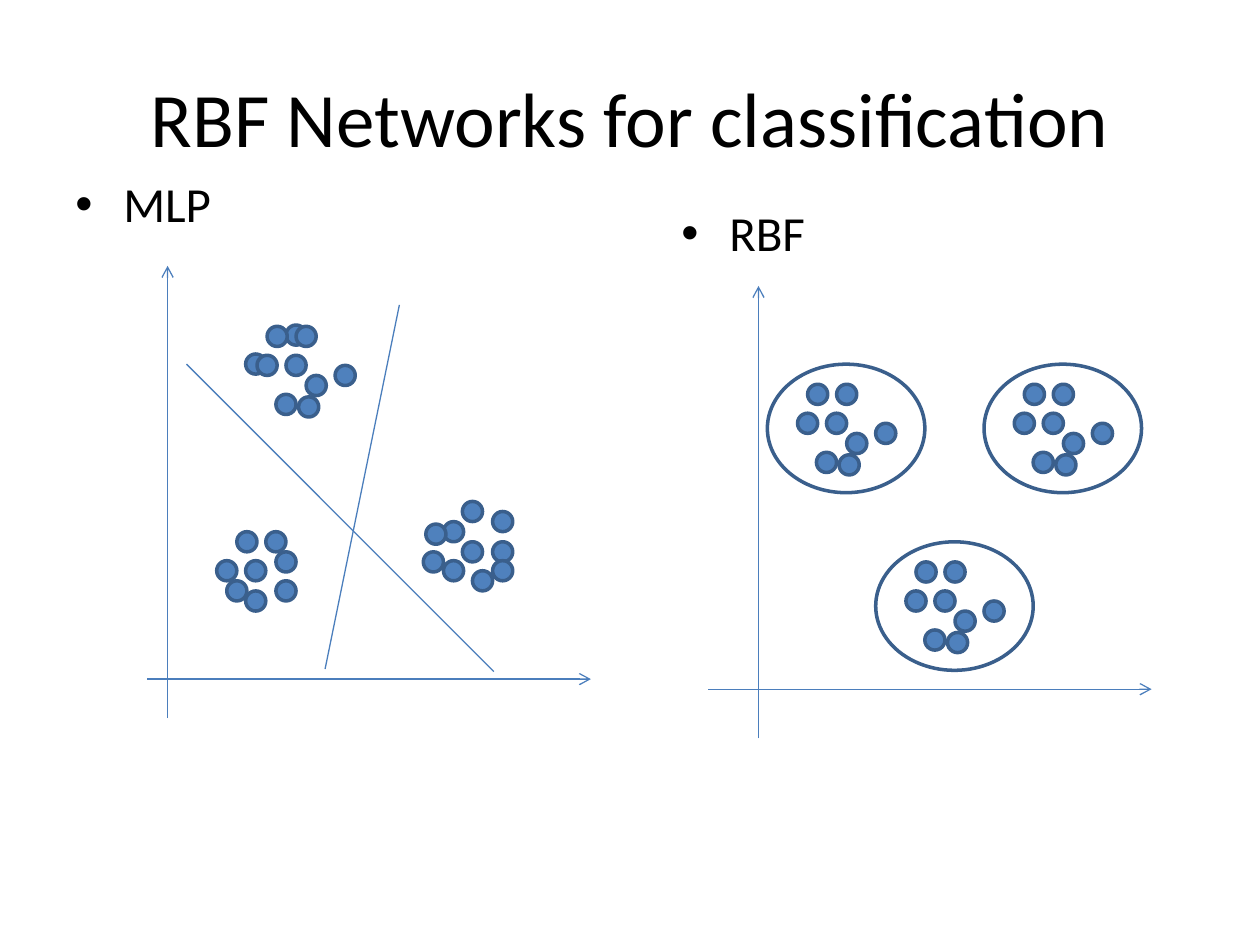
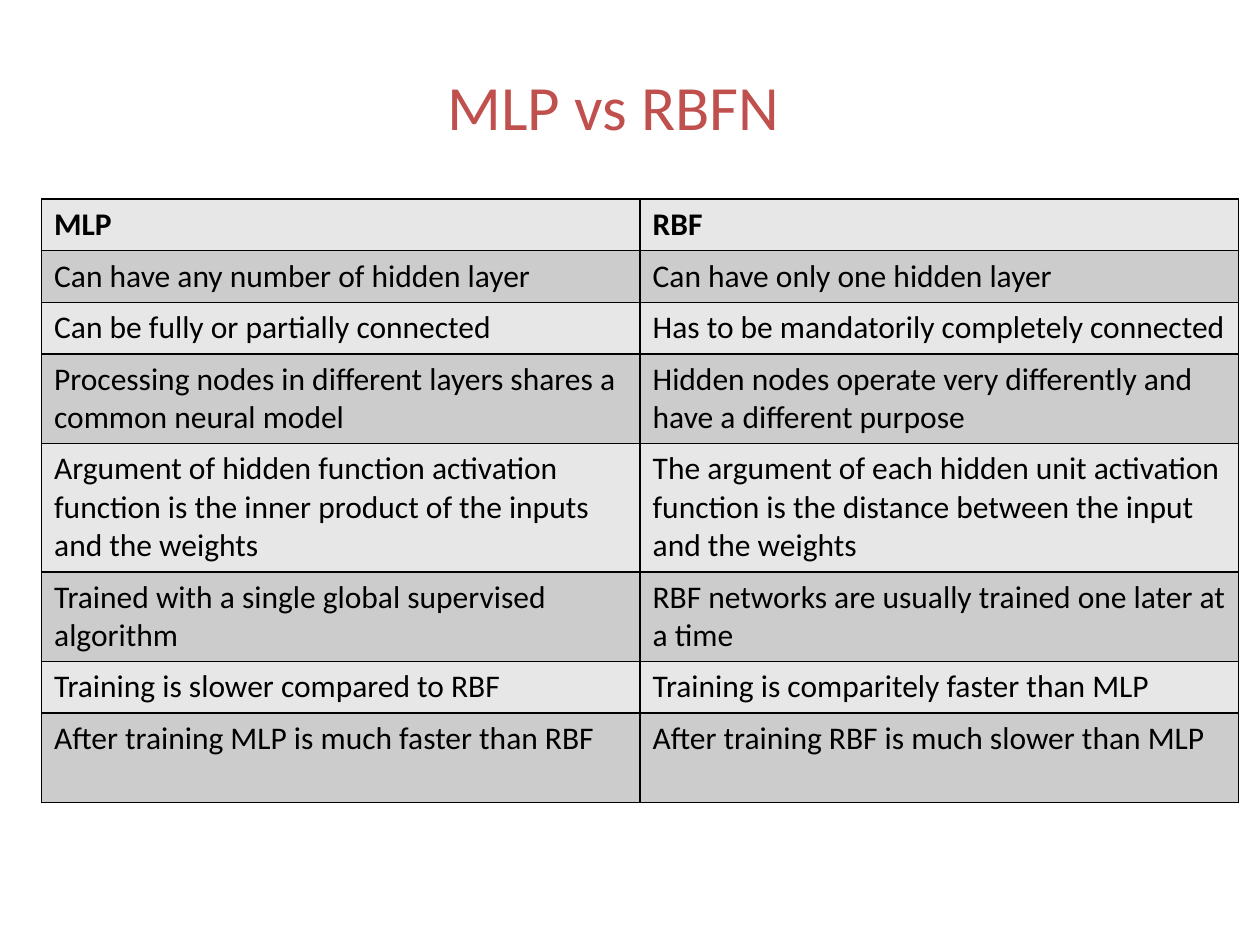
from pptx import Presentation
from pptx.dml.color import RGBColor
from pptx.enum.shapes import MSO_CONNECTOR, MSO_SHAPE
from pptx.enum.text import MSO_ANCHOR, PP_ALIGN
from pptx.oxml.ns import qn
from pptx.util import Inches, Pt
from lxml import etree

OVAL = MSO_SHAPE.OVAL
STRAIGHT = MSO_CONNECTOR.STRAIGHT
CENTER = PP_ALIGN.CENTER
MIDDLE = MSO_ANCHOR.MIDDLE

FONT = "Calibri"
BLACK, WHITE, RED = "000000", "FFFFFF", "C0504D"
BLUE, EDGE, LINE = "4F81BD", "3A5F8C", "4B7EBC"
BANDS = ("E7E7E7", "CCCCCC")
DOT = 0.16
PLOT = (3.52, 3.59)
RING = (1.25, 1.02)

CLUSTER = [(0.24, 0.39), (0.39, 0.7), (0.63, 0.55), (0.47, 0.39),
           (0.32, 0.16), (0.55, 0.16), (0.57, 0.72), (0.86, 0.47)]
TOP_DOTS = [(1.1, 0.47), (0.78, 0.7)]
LEFT_DOTS = [(0.78, 2.34), (0.71, 2.11), (1.02, 2.5), (0.55, 2.34),
             (0.78, 2.58), (1.02, 2.27), (0.94, 2.11), (0.63, 2.5)]
RIGHT_DOTS = [(2.5, 2.19), (2.74, 2.19), (2.5, 1.87), (2.58, 2.42),
              (2.74, 1.95), (2.35, 2.03), (2.35, 2.34), (2.74, 2.34),
              (2.19, 2.27), (2.21, 2.05)]
RINGS = [(1.33, 2.03), (2.19, 0.62), (0.47, 0.62)]

ROWS = [
    (0.41, "MLP", "RBF"),
    (0.41, "Can have any number of hidden layer",
     "Can have only one hidden layer"),
    (0.41, "Can be fully or partially connected",
     "Has to be mandatorily completely connected"),
    (0.71, "Processing nodes in different layers shares a common neural model",
     "Hidden nodes operate very differently and have a different purpose"),
    (1.02, "Argument of hidden function activation function is the inner "
     "product of the inputs and the weights",
     "The argument of each hidden unit activation function is the distance "
     "between the input and the weights"),
    (0.71, "Trained with a single global supervised algorithm",
     "RBF networks are usually trained one later at a time"),
    (0.41, "Training is slower compared to RBF",
     "Training is comparitely faster than MLP"),
    (0.71, "After training MLP is much faster than RBF",
     "After training RBF is much slower than MLP"),
]


def rgb(code):
    """Turn a hex string into a colour."""
    return RGBColor.from_string(code)


def style(para, size, color, bold=False):
    """Set the font of a paragraph."""
    font = para.font
    font.name, font.size, font.bold = FONT, Pt(size), bold
    font.color.rgb = rgb(color)


def place(shape, box):
    """Move a shape into a box given in inches."""
    shape.left, shape.top, shape.width, shape.height = map(Inches, box)


def add_slide(deck, text, box, size, color):
    """Add a title-only slide with its title formatted."""
    slide = deck.slides.add_slide(deck.slide_layouts[5])
    title = slide.shapes.title
    place(title, box)
    title.text_frame.text = text
    title.text_frame.vertical_anchor = MIDDLE
    para = title.text_frame.paragraphs[0]
    para.alignment = CENTER
    style(para, size, color)
    return slide


def bullet(slide, text, box):
    """Add a text box holding one bulleted heading."""
    frame = slide.shapes.add_textbox(*map(Inches, box)).text_frame
    frame.word_wrap = True
    para = frame.paragraphs[0]
    para.text = text
    para.space_before = Pt(5.6)
    style(para, 28, BLACK)
    props = para._p.get_or_add_pPr()
    props.set("marL", str(Inches(0.38)))
    props.set("indent", str(Inches(-0.38)))
    etree.SubElement(props, qn("a:buFont")).set("typeface", "Arial")
    etree.SubElement(props, qn("a:buChar")).set("char", "•")


def oval(shapes, box, fill):
    """Add an outlined oval."""
    shape = shapes.add_shape(OVAL, *map(Inches, box))
    shape.shadow.inherit = False
    shape.fill.solid()
    shape.fill.fore_color.rgb = rgb(fill)
    shape.line.color.rgb = rgb(EDGE)
    shape.line.width = Pt(2)


def dots(shapes, left, top, spots):
    """Add data points at offsets from a corner."""
    for x, y in spots:
        oval(shapes, (left + x, top + y, DOT, DOT), BLUE)


def cluster(slide, left, top):
    """Add a grouped cluster of eight points."""
    dots(slide.shapes.add_group_shape().shapes, left, top, CLUSTER)


def rule(slide, start, end, arrow=False):
    """Draw a thin line, with an arrowhead at its end if asked."""
    line = slide.shapes.add_connector(STRAIGHT, *map(Inches, start + end))
    line.line.color.rgb = rgb(LINE)
    line.line.width = Pt(0.75)
    if arrow:
        etree.SubElement(line.line._ln, qn("a:tailEnd")).set("type", "arrow")
    etree.SubElement(line._element.spPr, qn("a:effectLst"))


def axes(slide, left, top, x, y):
    """Draw two axes that cross at an offset in the plot box."""
    wide, high = PLOT
    rule(slide, (left + x, top + high), (left + x, top), True)
    rule(slide, (left, top + y), (left + wide, top + y), True)


def mlp_plot(slide, left, top):
    """Draw three clusters split by straight lines."""
    axes(slide, left, top, 0.16, 3.28)
    dots(slide.shapes, left, top, TOP_DOTS + LEFT_DOTS + RIGHT_DOTS)
    rule(slide, (left + 0.31, top + 0.78), (left + 2.75, top + 3.22))
    rule(slide, (left + 1.41, top + 3.2), (left + 2, top + 0.31))
    cluster(slide, left + 0.63, top + 0.32)


def rbf_plot(slide, left, top):
    """Draw three clusters, each inside a ring."""
    axes(slide, left, top, 0.4, 3.2)
    for x, y in RINGS:
        oval(slide.shapes, (left + x, top + y, *RING), WHITE)
        cluster(slide, left + x, top + y)


def border(cell):
    """Give a cell thin black borders."""
    props = cell._tc.get_or_add_tcPr()
    for side in ("lnL", "lnR", "lnT", "lnB"):
        edge = etree.SubElement(props, qn(f"a:{side}"))
        edge.set("w", str(Pt(1)))
        fill = etree.SubElement(edge, qn("a:solidFill"))
        etree.SubElement(fill, qn("a:srgbClr")).set("val", BLACK)


def grid(slide, left, top, width):
    """Add the banded comparison table."""
    high = sum(row[0] for row in ROWS)
    box = map(Inches, (left, top, width, high))
    table = slide.shapes.add_table(len(ROWS), 2, *box).table
    for i, (tall, *texts) in enumerate(ROWS):
        table.rows[i].height = Inches(tall)
        for j, text in enumerate(texts):
            cell = table.cell(i, j)
            cell.text = text
            style(cell.text_frame.paragraphs[0], 18, BLACK, i == 0)
            border(cell)
            cell.fill.solid()
            cell.fill.fore_color.rgb = rgb(BANDS[i % 2])


def main():
    """Build both slides and save them."""
    deck = Presentation()
    deck.slide_width, deck.slide_height = Inches(10), Inches(7.5)

    slide = add_slide(deck, "RBF Networks for classification",
                      (0.5, 0.3, 9, 1.25), 44, BLACK)
    bullet(slide, "MLP", (0.5, 1.33, 4.42, 5.37))
    bullet(slide, "RBF", (5.31, 1.56, 4.1, 5))
    mlp_plot(slide, 1.17, 2.11)
    rbf_plot(slide, 5.62, 2.27)

    slide = add_slide(deck, "MLP vs RBFN", (0.08, 0.25, 9.58, 1.17), 36, RED)
    grid(slide, 0.33, 1.58, 9.5)
    deck.save("out.pptx")


if __name__ == "__main__":
    main()
